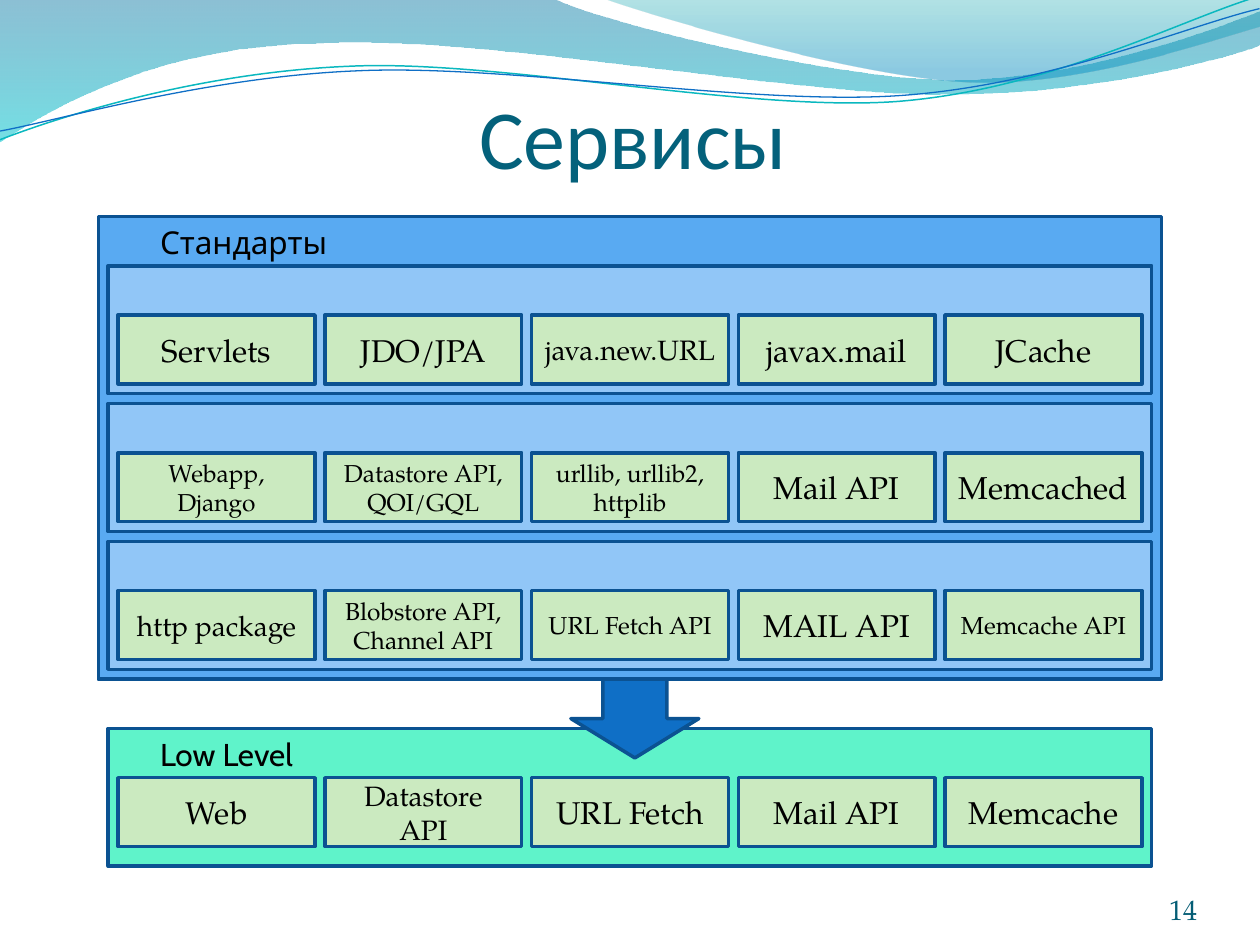
import pptx
import pptx.dml.color
import pptx.enum.shapes
import pptx.enum.text
import pptx.oxml.ns
import pptx.util
from lxml import etree

PX = 914400 / 128
SERIF = "TeX Gyre Pagella"
EDGE = "0B5292"
GAP = 10
HEADER = 50
CELL_HEIGHT = 70
ALIGN = pptx.enum.text.PP_ALIGN
ANCHOR = pptx.enum.text.MSO_ANCHOR
PRESET = pptx.enum.shapes.MSO_SHAPE

STANDARDS = [
    [("Servlets", 18), ("JDO/JPA", 18), ("java.new.URL", 16), ("javax.mail", 18), ("JCache", 18)],
    [("Webapp,\nDjango", 14), ("Datastore API, QOI/GQL", 14), ("urllib, urllib2, httplib", 14),
     ("Mail API", 18), ("Memcached", 18)],
    [("http package", 16), ("Blobstore API, Channel API", 14), ("URL Fetch API", 14),
     ("MAIL API", 18), ("Memcache API", 14)],
]
LOW_LEVEL = [("Web", 18), ("Datastore API", 16), ("URL Fetch", 18), ("Mail API", 18), ("Memcache", 18)]

BACK_WAVE = [
    [(0, 0)], [(563, -1)],
    [(609, 22), (850, 81), (970, 81)], [(1092, 81), (1226, 33), (1280, 12)], [(1281, 46)],
    [(1258, 56), (1114, 97), (955, 96)], [(796, 96), (489, 36), (329, 44)],
    [(165, 46), (59, 106), (-1, 145)],
]
FRONT_WAVE = [
    [(613, -1)], [(652, 14), (873, 79), (984, 83)],
    [(1096, 88), (1230, 41), (1280, 27)], [(1280, 0)],
]
TEAL_LINE = [
    [(-3, 112)], [(60, 91), (202, 53), (356, 54)],
    [(507, 54), (757, 120), (910, 116)], [(1066, 111), (1203, 46), (1280, 27)],
]
BLUE_LINE = [
    [(-2, 103)], [(58, 95), (210, 58), (363, 59)],
    [(517, 59), (762, 114), (916, 110)], [(1069, 106), (1207, 53), (1282, 39)],
]


def emu(px):
    """Turn pixels into EMU."""
    return pptx.util.Emu(round(px * PX))


def paint(color_format, color):
    """Set a solid colour from a hex string."""
    color_format.rgb = pptx.dml.color.RGBColor.from_string(color)


def write(frame, text, size, font, color, align=ALIGN.LEFT, anchor=ANCHOR.TOP):
    """Fill a text frame, one paragraph per line of text."""
    frame.word_wrap = True
    frame.vertical_anchor = anchor
    for index, line in enumerate(text.split("\n")):
        paragraph = frame.add_paragraph() if index else frame.paragraphs[0]
        paragraph.alignment = align
        run = paragraph.add_run()
        run.text = line
        run.font.size = pptx.util.Pt(size)
        run.font.name = font
        paint(run.font.color, color)


def add_text(slide, box, *style, margins=None):
    """Place a text box, with margins in pt if given."""
    frame = slide.shapes.add_textbox(*map(emu, box)).text_frame
    if margins:
        frame.margin_left, frame.margin_top, frame.margin_right, frame.margin_bottom = map(pptx.util.Pt, margins)
    write(frame, *style)


def add_block(slide, box, fill, preset=PRESET.RECTANGLE):
    """Place a filled and outlined preset shape."""
    block = slide.shapes.add_shape(preset, *map(emu, box))
    block.shadow.inherit = False
    block.fill.solid()
    paint(block.fill.fore_color, fill)
    paint(block.line.color, EDGE)
    block.line.width = pptx.util.Pt(2)
    return block


def add_curve(slide, segments, close):
    """Draw a freeform whose three-point segments are cubic curves."""
    start, *rest = [(emu(x), emu(y)) for segment in segments for x, y in segment]
    builder = slide.shapes.build_freeform(*start)
    builder.add_line_segments(rest, close=close)
    curve = builder.convert_to_shape()
    curve.shadow.inherit = False
    lines = curve._element.iter(pptx.oxml.ns.qn("a:lnTo"))
    remaining = iter(list(lines))
    for segment in segments[1:]:
        first, *others = [next(remaining) for point in segment]
        if others:
            cubic = etree.Element(pptx.oxml.ns.qn("a:cubicBezTo"))
            first.addprevious(cubic)
            for line in (first, *others):
                cubic.append(line[0])
                line.getparent().remove(line)
    return curve


def add_wave(slide, segments, stops):
    """Draw a wave with a translucent vertical gradient."""
    wave = add_curve(slide, segments, True)
    wave.line.fill.background()
    wave.fill.gradient()
    wave.fill.gradient_angle = 270
    for stop, (position, color, opacity) in zip(wave.fill.gradient_stops, stops):
        stop.position = position
        paint(stop.color, color)
    tints = wave._element.spPr.iter(pptx.oxml.ns.qn("a:srgbClr"))
    for tint, (position, color, opacity) in zip(tints, stops):
        etree.SubElement(tint, pptx.oxml.ns.qn("a:alpha"), val=str(opacity * 1000))


def add_wave_line(slide, segments, color, width):
    """Draw a thin open curve, tilted slightly upwards."""
    curve = add_curve(slide, segments, False)
    curve.rotation = 357.3
    curve.fill.background()
    paint(curve.line.color, color)
    curve.line.width = pptx.util.Pt(width)


def add_banner(slide):
    """Draw the waves along the top edge."""
    add_wave(slide, BACK_WAVE, [(0, "0074A1", 45), (1, "00C6CF", 55)])
    add_wave(slide, FRONT_WAVE, [(0, "00A1A9", 30), (0.8, "008BBF", 45)])
    add_wave_line(slide, TEAL_LINE, "0AB8BF", 0.85)
    add_wave_line(slide, BLUE_LINE, "0F6FC6", 0.75)


def add_service_row(slide, box, fill, services):
    """Draw a panel with equal service cells under its header space."""
    left, top, width, height = box
    add_block(slide, box, fill)
    cell_width = (width - GAP * (len(services) + 1)) // len(services)
    for column, (service, size) in enumerate(services):
        cell_left = left + GAP + column * (cell_width + GAP)
        cell = add_block(slide, (cell_left, top + HEADER, cell_width, CELL_HEIGHT), "CBEAC0")
        write(cell.text_frame, service, size, SERIF, "000000", ALIGN.CENTER, ANCHOR.MIDDLE)


def add_standards(slide, box):
    """Draw the standards panel with its three service rows."""
    left, top, width, height = box
    row_height = 130
    add_block(slide, box, "59AAF2")
    add_text(slide, (left + 50, top, 220, 51), "Стандарты", 18, "Cabin", "000000")
    for index, services in enumerate(STANDARDS):
        row_top = top + HEADER + index * (row_height + GAP)
        add_service_row(slide, (left + GAP, row_top, width - 2 * GAP, row_height), "91C6F7", services)


def add_low_level(slide, box):
    """Draw the low level panel with its label."""
    left, top, width, height = box
    add_service_row(slide, box, "5FF3CA", LOW_LEVEL)
    add_text(slide, (left + 40, top, 270, 51), "Low Level", 18, "Cabin", "000000")


def main():
    """Build the services slide."""
    deck = pptx.Presentation()
    deck.slide_width, deck.slide_height = emu(1280), emu(960)
    slide = deck.slides.add_slide(deck.slide_layouts[6])
    add_banner(slide)
    add_text(slide, (110, 70, 1066, 119), "Сервисы", 48, "Calibri", "04617B",
             ALIGN.CENTER, ANCHOR.BOTTOM, margins=(0, 3.6, 0, 0))
    add_text(slide, (1110, 890, 106, 51), "14", 16, SERIF, "045D75",
             ALIGN.RIGHT, ANCHOR.BOTTOM, margins=(0, 0, 0, 0))
    add_standards(slide, (100, 220, 1080, 470))
    add_low_level(slide, (110, 740, 1060, 140))
    add_block(slide, (580, 690, 130, 80), "0F6FC6", PRESET.DOWN_ARROW)
    deck.save("out.pptx")


if __name__ == "__main__":
    main()
